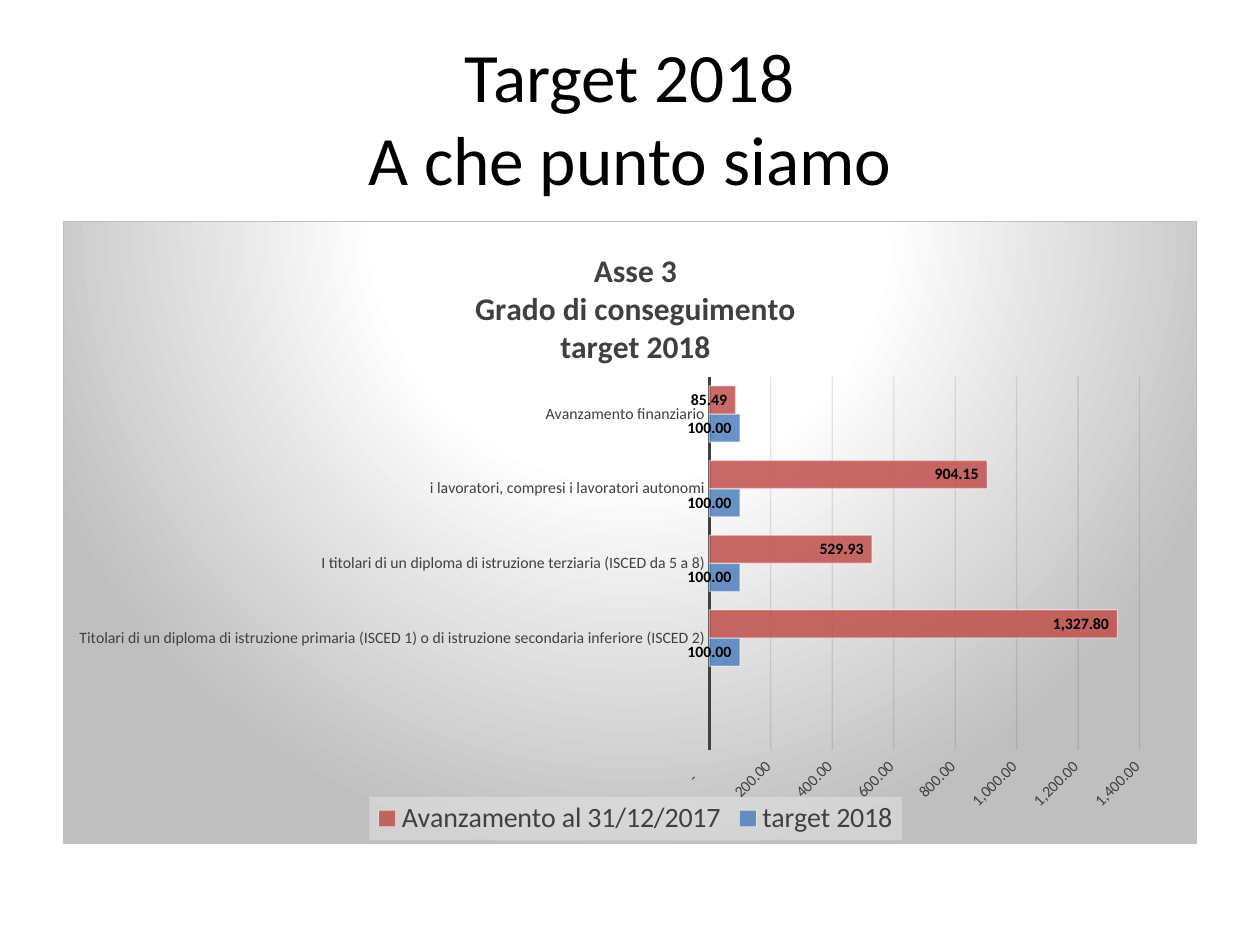
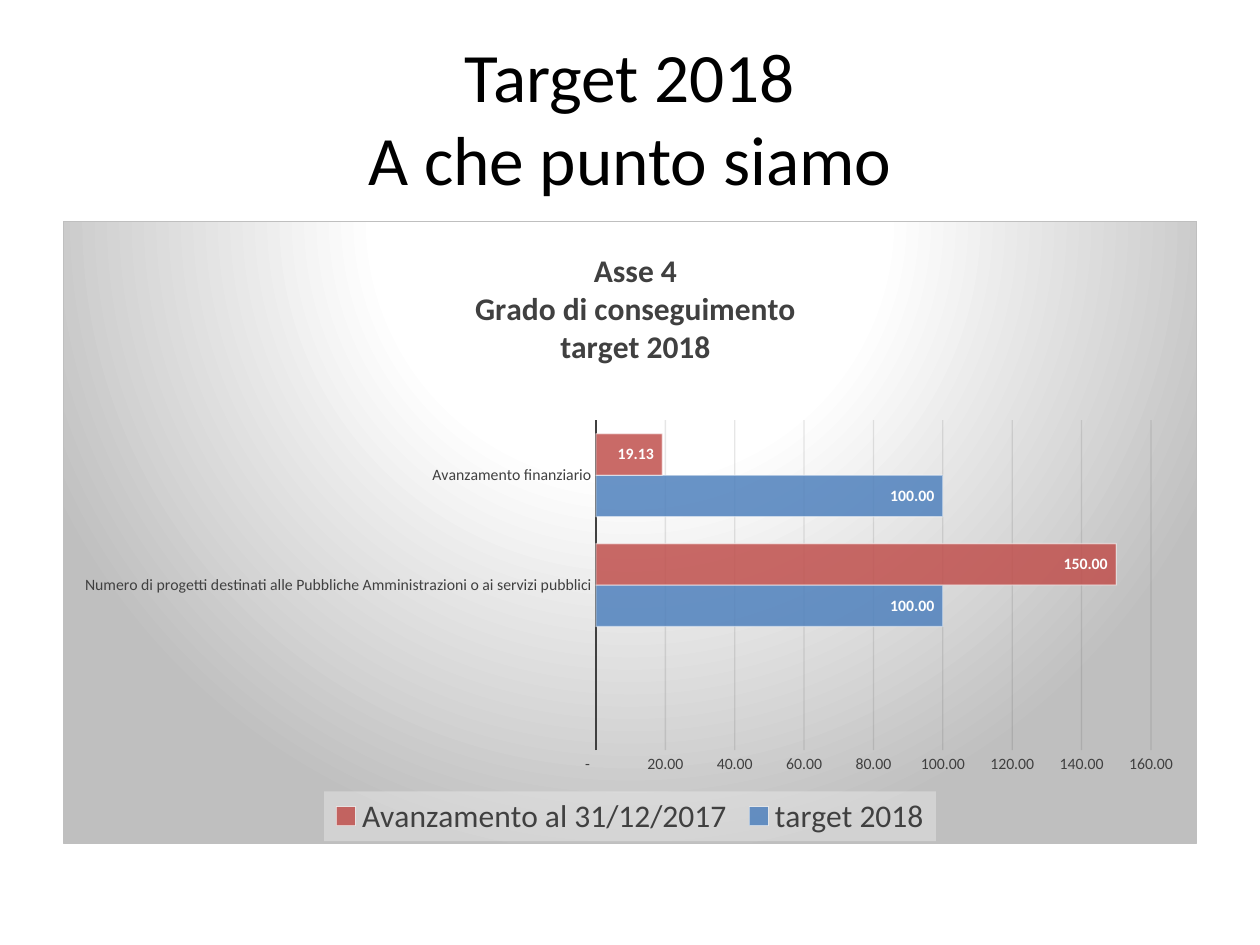
from lxml import etree
from pptx import Presentation
from pptx.chart.data import CategoryChartData
from pptx.dml.color import RGBColor
from pptx.enum.chart import XL_CHART_TYPE, XL_LABEL_POSITION, XL_LEGEND_POSITION, XL_TICK_MARK
from pptx.enum.text import MSO_ANCHOR, PP_ALIGN
from pptx.oxml import parse_xml
from pptx.oxml.ns import qn
from pptx.util import Inches, Pt

BAR_CLUSTERED = XL_CHART_TYPE.BAR_CLUSTERED
INSIDE_END = XL_LABEL_POSITION.INSIDE_END
LEGEND_BOTTOM = XL_LEGEND_POSITION.BOTTOM
NO_TICK = XL_TICK_MARK.NONE
MIDDLE = MSO_ANCHOR.MIDDLE
CENTER = PP_ALIGN.CENTER

FONT = "Calibri"
BLACK = RGBColor(0x00, 0x00, 0x00)
WHITE = RGBColor(0xFF, 0xFF, 0xFF)
DARK_GREY = RGBColor(0x40, 0x40, 0x40)
GRID = RGBColor(0x0D, 0x0D, 0x0D)
SILVER = RGBColor(0xBF, 0xBF, 0xBF)
PALE_GREY = RGBColor(0xF2, 0xF2, 0xF2)
BLUE = RGBColor(0x4F, 0x81, 0xBD)
RED = RGBColor(0xC0, 0x50, 0x4D)

NUMBER_FORMAT = '_(* #,##0.00_);_(* \\(#,##0.00\\);_(* "-"??_);_(@_)'
NAMESPACES = (
    'xmlns:c="http://schemas.openxmlformats.org/drawingml/2006/chart" '
    'xmlns:a="http://schemas.openxmlformats.org/drawingml/2006/main"'
)
SLIDE_TITLE = "Target 2018\nA che punto siamo"
SERIES_COLORS = {"target 2018": BLUE, "Avanzamento al 31/12/2017": RED}

CHARTS = [
    {
        "title": "Asse 3\nGrado di conseguimento\ntarget 2018",
        "categories": [
            "",
            "Titolari di un diploma di istruzione primaria (ISCED 1) o di istruzione secondaria inferiore (ISCED 2)",
            "I titolari di un diploma di istruzione terziaria (ISCED da 5 a 8)",
            "i lavoratori, compresi i lavoratori autonomi",
            "Avanzamento finanziario",
        ],
        "values": [[None, 100, 100, 100, 100], [None, 1327.8, 529.93, 904.15, 85.49]],
        "label_color": BLACK,
        "maximum": 1400,
        "step": 200,
        "tick_angle": -45,
        "legend_size": 16,
        "plot_box": (0.57, 0.25, 0.38, 0.6),
        "legend_box": (0.27, 0.93, 0.47, 0.07),
    },
    {
        "title": "Asse 4\nGrado di conseguimento\ntarget 2018",
        "categories": [
            "",
            "Numero di progetti destinati alle Pubbliche Amministrazioni o ai servizi pubblici",
            "Avanzamento finanziario",
        ],
        "values": [[None, 100, 100], [None, 150, 19.13]],
        "label_color": WHITE,
        "maximum": 160,
        "step": 20,
        "tick_angle": 0,
        "legend_size": 18,
        "plot_box": (0.47, 0.32, 0.49, 0.53),
        "legend_box": (0.23, 0.92, 0.54, 0.08),
    },
]


def style_font(font, size, color, bold=False):
    """Set the shared typeface with a size, colour and weight."""
    font.name = FONT
    font.size = Pt(size)
    font.bold = bold
    font.color.rgb = color


def write_text(text_frame, text, size=18, color=BLACK, bold=False):
    """Write centred lines, one paragraph for each."""
    for number, line in enumerate(text.split("\n")):
        paragraph = text_frame.add_paragraph() if number else text_frame.paragraphs[0]
        paragraph.alignment = CENTER
        run = paragraph.add_run()
        run.text = line
        style_font(run.font, size, color, bold)


def set_fill(fill, color, opacity=100):
    """Give a fill a solid colour and an opacity in percent."""
    fill.solid()
    fill.fore_color.rgb = color
    if opacity < 100:
        color_element = fill._xPr.find(f"{qn('a:solidFill')}/{qn('a:srgbClr')}")
        etree.SubElement(color_element, qn("a:alpha"), val=str(opacity * 1000))


def set_line(line, color, width=0.75, opacity=100):
    """Give a line a colour, width and opacity."""
    line.width = Pt(width)
    set_fill(line.fill, color, opacity)


def place(element, index, left, top, width=None, height=None, inner=False):
    """Fix a chart part at fractions of the chart area."""
    for layout in element.findall(qn("c:layout")):
        element.remove(layout)
    entries = [("xMode", "edge"), ("yMode", "edge"), ("x", left), ("y", top)]
    if inner:
        entries.insert(0, ("layoutTarget", "inner"))
    if width is not None:
        entries += [("w", width), ("h", height)]
    tags = "".join(f'<c:{name} val="{value}"/>' for name, value in entries)
    layout = parse_xml(f"<c:layout {NAMESPACES}><c:manualLayout>{tags}</c:manualLayout></c:layout>")
    element.insert(index, layout)


def add_background(text_properties, content):
    """Insert shape properties ahead of a chart part's text properties."""
    text_properties.addprevious(parse_xml(f"<c:spPr {NAMESPACES}>{content}</c:spPr>"))


def add_chart_background(chart):
    """Fill the chart area with a round gradient and a thin border."""
    stops = "".join(
        f'<a:gs pos="{position * 1000}"><a:srgbClr val="{color}"/></a:gs>'
        for position, color in ((0, WHITE), (39, WHITE), (100, SILVER))
    )
    add_background(
        chart._chartSpace.find(qn("c:txPr")),
        f'<a:gradFill><a:gsLst>{stops}</a:gsLst><a:path path="circle">'
        '<a:fillToRect l="50000" t="-80000" r="50000" b="180000"/></a:path></a:gradFill>'
        f'<a:ln w="{Pt(0.75)}"><a:solidFill><a:srgbClr val="{SILVER}"/></a:solidFill></a:ln>',
    )


def format_axes(chart, maximum, step, tick_angle):
    """Style both axes and the value gridlines."""
    for axis in (chart.category_axis, chart.value_axis):
        axis.major_tick_mark = axis.minor_tick_mark = NO_TICK
        style_font(axis.tick_labels.font, 9, DARK_GREY)
    set_line(chart.category_axis.format.line, DARK_GREY, 1.5)
    chart.category_axis.has_major_gridlines = False

    axis = chart.value_axis
    axis.minimum_scale, axis.maximum_scale, axis.major_unit = 0, maximum, step
    axis.format.line.fill.background()
    axis.has_major_gridlines = True
    set_line(axis.major_gridlines.format.line, GRID, opacity=10)
    axis.tick_labels.number_format = NUMBER_FORMAT
    axis.tick_labels.number_format_is_linked = False
    body = axis._element.find(f"{qn('c:txPr')}/{qn('a:bodyPr')}")
    body.set("rot", str(tick_angle * 60000))


def format_series(series, label_color):
    """Colour one series and label its bars."""
    set_fill(series.format.fill, SERIES_COLORS[series.name], 85)
    set_line(series.format.line, WHITE, opacity=50)
    series.invert_if_negative = False
    labels = series.data_labels
    labels.show_value = True
    labels.position = INSIDE_END
    labels.number_format = NUMBER_FORMAT
    labels.number_format_is_linked = False
    style_font(labels.font, 9, label_color, bold=True)


def format_legend(chart, size, box):
    """Put a translucent legend below the plot."""
    chart.has_legend = True
    legend = chart.legend
    legend.position = LEGEND_BOTTOM
    legend.include_in_layout = False
    style_font(legend.font, size, DARK_GREY)
    add_background(
        legend._element.find(qn("c:txPr")),
        f'<a:solidFill><a:srgbClr val="{PALE_GREY}"><a:alpha val="39000"/></a:srgbClr></a:solidFill>',
    )
    place(legend._element, 1, *box)


def add_target_chart(slide, details):
    """Add the bar chart of progress against the target."""
    data = CategoryChartData()
    data.categories = details["categories"]
    for name, values in zip(SERIES_COLORS, details["values"]):
        data.add_series(name, values)
    frame = slide.shapes.add_chart(
        BAR_CLUSTERED, Inches(0.5), Inches(1.75), Inches(9), Inches(4.95), data
    )
    chart = frame.chart
    style_font(chart.font, 10, BLACK)
    add_chart_background(chart)

    chart.has_title = True
    write_text(chart.chart_title.text_frame, details["title"], size=18, color=DARK_GREY, bold=True)
    chart.chart_title.include_in_layout = False
    place(chart.chart_title._element, 1, 0.36, 0.04)

    plot = chart.plots[0]
    plot.gap_width = 65
    plot.overlap = 0
    plot.vary_by_categories = False
    for series in plot.series:
        format_series(series, details["label_color"])
    format_axes(chart, details["maximum"], details["step"], details["tick_angle"])
    format_legend(chart, details["legend_size"], details["legend_box"])
    plot_area = chart._chartSpace.find(f"{qn('c:chart')}/{qn('c:plotArea')}")
    place(plot_area, 0, *details["plot_box"], inner=True)


def add_slide_title(slide):
    """Add the heading shared by the slides."""
    box = slide.shapes.add_textbox(Inches(0.5), Inches(0.3), Inches(9), Inches(1.25))
    box.text_frame.word_wrap = True
    box.text_frame.vertical_anchor = MIDDLE
    write_text(box.text_frame, SLIDE_TITLE, size=39.6)


def main():
    """Build and save the presentation."""
    presentation = Presentation()
    presentation.slide_width = Inches(10)
    presentation.slide_height = Inches(7.5)
    for details in CHARTS:
        slide = presentation.slides.add_slide(presentation.slide_layouts[6])
        add_slide_title(slide)
        add_target_chart(slide, details)
    presentation.save("out.pptx")


if __name__ == "__main__":
    main()
